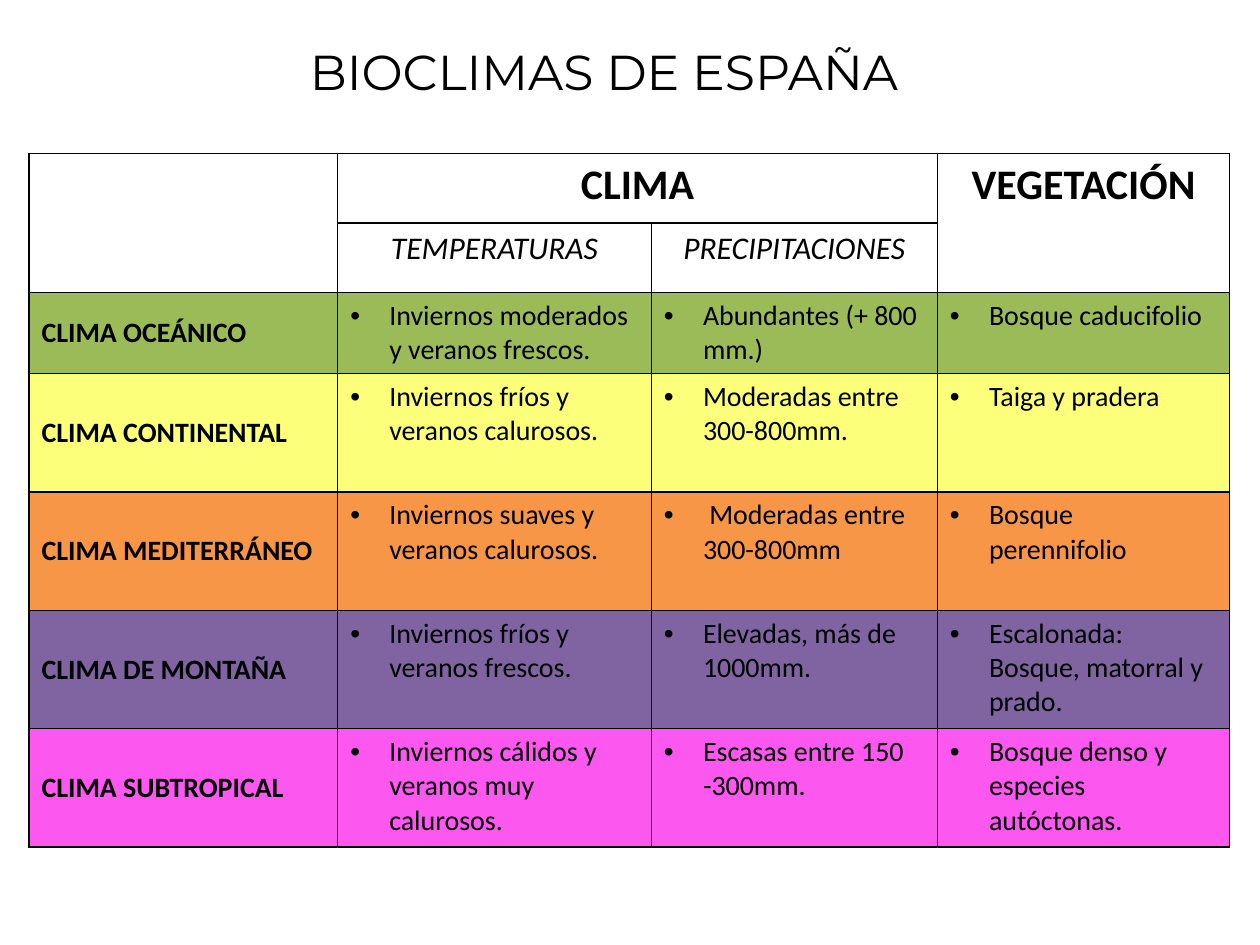
from lxml import etree
from pptx import Presentation, util as u
from pptx.dml.color import RGBColor
from pptx.enum import text as t
from pptx.oxml import ns

BLACK = "000000"
MIDDLE, TOP = t.MSO_ANCHOR.MIDDLE, t.MSO_ANCHOR.TOP
LEFT, CENTER = t.PP_ALIGN.LEFT, t.PP_ALIGN.CENTER

deck = Presentation()
deck.slide_width, deck.slide_height = u.Inches(10), u.Inches(7.5)
slide = deck.slides.add_slide(deck.slide_layouts[5])


def write(frame, words, size=16, font="Calibri", color=BLACK, bold=False,
          italic=False, align=LEFT, bullet=False):
    paragraph = frame.paragraphs[0]
    paragraph.alignment = align
    run = paragraph.add_run()
    run.text = words
    run.font.size, run.font.name = u.Pt(size), font
    run.font.bold, run.font.italic = bold, italic
    run.font.color.rgb = RGBColor.from_string(color)
    if bullet:
        props = paragraph._p.get_or_add_pPr()
        indent = u.Inches(0.31)
        props.set("marL", str(indent))
        props.set("indent", str(-indent))
        etree.SubElement(props, ns.qn("a:buFont")).set("typeface", "Arial")
        etree.SubElement(props, ns.qn("a:buChar")).set("char", "•")


def format_cell(cell, fill=None, border=BLACK, width=1):
    props = cell._tc.get_or_add_tcPr()
    for side in ("lnL", "lnR", "lnT", "lnB"):
        line = etree.SubElement(props, ns.qn("a:" + side), w=str(u.Pt(width)))
        solid = etree.SubElement(line, ns.qn("a:solidFill"))
        etree.SubElement(solid, ns.qn("a:srgbClr")).set("val", border)
    if fill:
        cell.fill.solid()
        cell.fill.fore_color.rgb = RGBColor.from_string(fill)
    else:
        cell.fill.background()


# Title
title = slide.shapes.title
title.left, title.top = u.Inches(2.36), u.Inches(0.28)
title.width, title.height = u.Inches(5.27), u.Inches(0.57)
title.text_frame.vertical_anchor = TOP
title.text_frame.word_wrap = False
write(title.text_frame, "BIOCLIMAS DE ESPAÑA", size=28, font="Montserrat")

# Climates: colour, name, temperatures, rainfall, vegetation
climates = [
    ("9BBB59", "CLIMA OCEÁNICO", "Inviernos moderados y veranos frescos.",
     "Abundantes (+ 800 mm.)", "Bosque caducifolio"),
    ("FCFF7A", "CLIMA CONTINENTAL", "Inviernos fríos y veranos calurosos.",
     "Moderadas entre 300-800mm.", "Taiga y pradera"),
    ("F79646", "CLIMA MEDITERRÁNEO", "Inviernos suaves y veranos calurosos.",
     " Moderadas entre 300-800mm", "Bosque perennifolio"),
    ("8064A2", "CLIMA DE MONTAÑA", "Inviernos fríos y veranos frescos.",
     "Elevadas, más de 1000mm.", "Escalonada: Bosque, matorral y prado."),
    ("FC58F0", "CLIMA SUBTROPICAL", "Inviernos cálidos y veranos muy calurosos.",
     "Escasas entre 150 -300mm.", "Bosque denso y especies autóctonas."),
]

# Table grid
columns = [2.45, 2.49, 2.27, 2.32]
rows = [0.55] * 2 + [0.64] + [0.94] * 4
bioclimates = slide.shapes.add_table(
    len(rows), len(columns), u.Inches(0.23), u.Inches(1.22),
    u.Inches(sum(columns)), u.Inches(sum(rows))).table
bioclimates.first_row = bioclimates.horz_banding = False
for column, width in zip(bioclimates.columns, columns):
    column.width = u.Inches(width)
for row, height in zip(bioclimates.rows, rows):
    row.height = u.Inches(height)

# Two-row heading
for r in range(2):
    for c in range(len(columns)):
        format_cell(bioclimates.cell(r, c))
for first, last in [((0, 0), (1, 0)), ((0, 1), (0, 2)), ((0, 3), (1, 3))]:
    bioclimates.cell(*first).merge(bioclimates.cell(*last))
for c, heading in [(1, "CLIMA"), (3, "VEGETACIÓN")]:
    write(bioclimates.cell(0, c).text_frame, heading, size=24, bold=True, align=CENTER)
for c, heading in [(1, "TEMPERATURAS"), (2, "PRECIPITACIONES")]:
    write(bioclimates.cell(1, c).text_frame, heading, size=18, italic=True, align=CENTER)

# One coloured row per climate
for r, (color, *entries) in enumerate(climates, start=2):
    for c, entry in enumerate(entries):
        cell = bioclimates.cell(r, c)
        is_name = c == 0
        format_cell(cell, fill=color)
        cell.vertical_anchor = MIDDLE if is_name else TOP
        write(cell.text_frame, entry, bold=is_name, bullet=not is_name)

deck.save("out.pptx")
